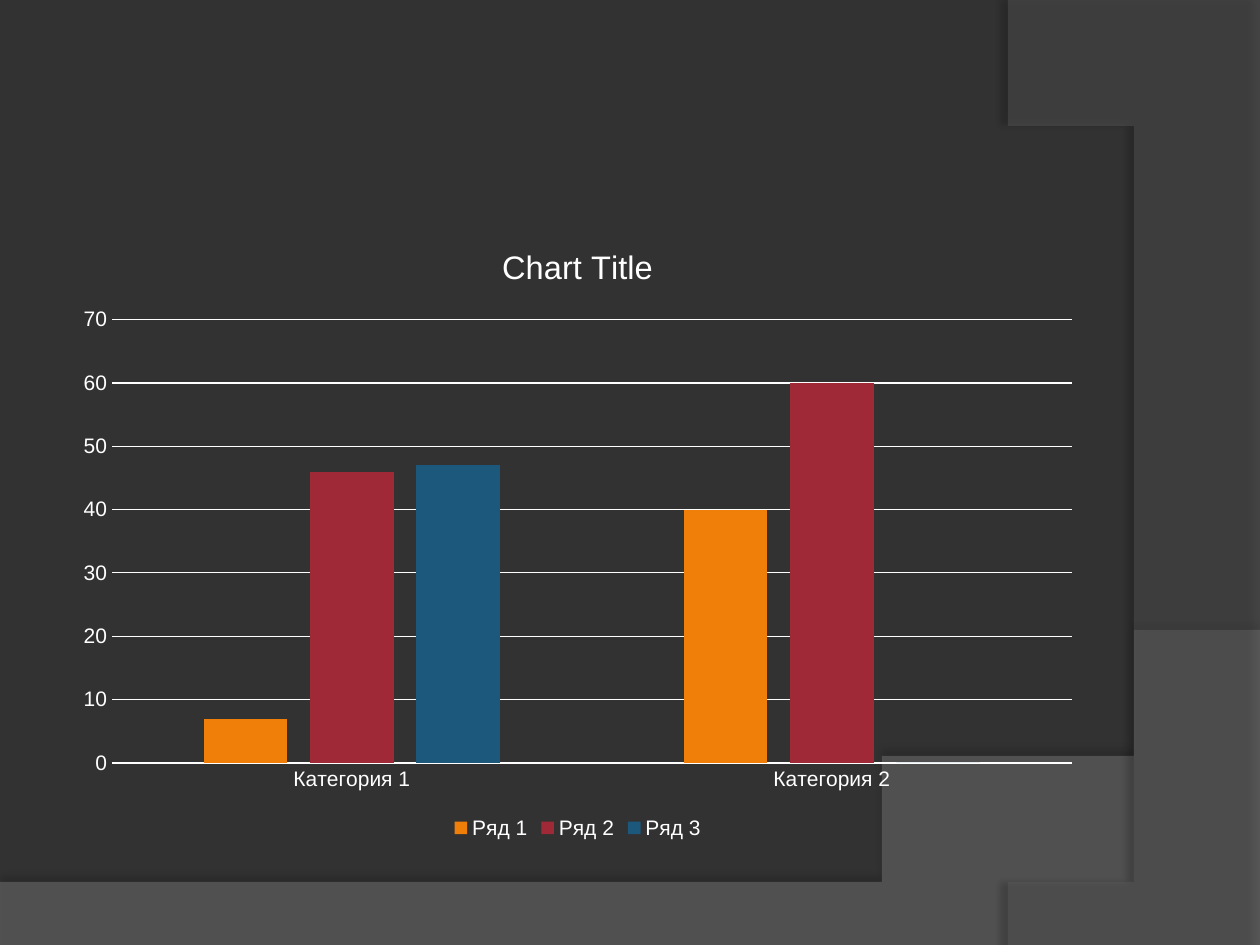
from lxml import etree
from pptx import Presentation, util as u
from pptx.chart.data import CategoryChartData
from pptx.dml.color import RGBColor
from pptx.enum import chart as ch
from pptx.oxml import ns

BACKGROUND, WHITE, FONT = "323232", "FFFFFF", "Arial"
CATEGORIES = ["Категория 1", "Категория 2"]
SERIES = [
    ("Ряд 1", (7, 40), "F07F09"),
    ("Ряд 2", (46, 60), "9F2936"),
    ("Ряд 3", (47, 0), "1B587C"),
]
WAVES = [
    {
        "before": [(0, 7.05), (0, 7.51), (10, 7.51)],
        "curve": [(10, 5.2), (5.59, 7.29), (3.91, 7.19), (0, 7.05)],
        "fill": ("7F7F7F", 45),
        "shadow": {"opacity": 35, "blur": 4, "distance": 3.5, "angle": 270},
    },
    {
        "before": [(10, 0.02), (10, 7.5)],
        "curve": [(8.21, 7.5), (9.35, 6.19), (10.18, 3), (8, 0)],
        "fill": ("5E5E5E", 40),
        "shadow": {"opacity": 45, "blur": 4, "distance": 4, "angle": 180},
    },
]
CURVE_STEPS = 60


def color(value):
    return RGBColor.from_string(value)


def add_alpha(color_element, percent):
    etree.SubElement(color_element, ns.qn("a:alpha"), val=str(percent * 1000))


def bezier(points):
    for step in range(CURVE_STEPS + 1):
        t = step / CURVE_STEPS
        weights = ((1 - t) ** 3, 3 * t * (1 - t) ** 2, 3 * t * t * (1 - t), t ** 3)
        yield tuple(sum(w * p[axis] for w, p in zip(weights, points)) for axis in (0, 1))


def add_wave(slide, wave):
    start, *rest = wave["before"] + list(bezier(wave["curve"]))
    builder = slide.shapes.build_freeform(*start, scale=u.Inches(1))
    builder.add_line_segments(rest, close=True)
    shape = builder.convert_to_shape()
    fill_color, opacity = wave["fill"]
    shape.fill.solid()
    shape.fill.fore_color.rgb = color(fill_color)
    shape.line.fill.background()
    properties = shape.element.spPr
    add_alpha(properties.find(".//" + ns.qn("a:solidFill"))[0], opacity)
    shadow = wave["shadow"]
    effects = etree.SubElement(properties, ns.qn("a:effectLst"))
    outer = etree.SubElement(
        effects, ns.qn("a:outerShdw"), blurRad=str(u.Pt(shadow["blur"])),
        dist=str(u.Pt(shadow["distance"])), dir=str(shadow["angle"] * 60000),
        algn="ctr", rotWithShape="0")
    add_alpha(etree.SubElement(outer, ns.qn("a:srgbClr"), val="000000"), shadow["opacity"])


def set_font(font, size):
    values = {"name": FONT, "size": u.Pt(size), "bold": False}
    for name, value in values.items():
        setattr(font, name, value)
    font.color.rgb = color(WHITE)


def set_line(line):
    line.width = u.Pt(0.75)
    line.color.rgb = color(WHITE)


def add_chart(slide):
    data = CategoryChartData()
    data.categories = CATEGORIES
    for name, values, _ in SERIES:
        data.add_series(name, values)
    box = [u.Inches(length) for length in (0.5, 1.75, 8.17, 4.95)]
    chart = slide.shapes.add_chart(ch.XL_CHART_TYPE.COLUMN_CLUSTERED, *box, data).chart
    set_font(chart.font, 10)
    chart.has_title = True
    chart.chart_title.include_in_layout = False
    paragraph = chart.chart_title.text_frame.paragraphs[0]
    run = paragraph.add_run()
    run.text = "Chart Title"
    set_font(run.font, 18.6)
    chart.has_legend = True
    chart.legend.position = ch.XL_LEGEND_POSITION.BOTTOM
    chart.legend.include_in_layout = False
    set_font(chart.legend.font, 12)

    for axis in (chart.category_axis, chart.value_axis):
        axis.major_tick_mark = axis.minor_tick_mark = ch.XL_TICK_MARK.NONE
        set_font(axis.tick_labels.font, 12)
    set_line(chart.category_axis.format.line)
    chart.value_axis.format.line.fill.background()
    set_line(chart.value_axis.major_gridlines.format.line)
    for name, value in {"minimum_scale": 0, "maximum_scale": 70, "major_unit": 10}.items():
        setattr(chart.value_axis, name, value)

    plot = chart.plots[0]
    for name, value in {"gap_width": 219, "overlap": -27, "vary_by_categories": False}.items():
        setattr(plot, name, value)
    for series, (_, _, fill_color) in zip(plot.series, SERIES):
        series.format.fill.solid()
        series.format.fill.fore_color.rgb = color(fill_color)


def main():
    """Build the slide with two translucent waves and a clustered column chart."""
    presentation = Presentation()
    presentation.slide_width, presentation.slide_height = u.Inches(10), u.Inches(7.5)
    slide = presentation.slides.add_slide(presentation.slide_layouts[6])
    slide.background.fill.solid()
    slide.background.fill.fore_color.rgb = color(BACKGROUND)
    for wave in WAVES:
        add_wave(slide, wave)
    add_chart(slide)
    presentation.save("out.pptx")


if __name__ == "__main__":
    main()
